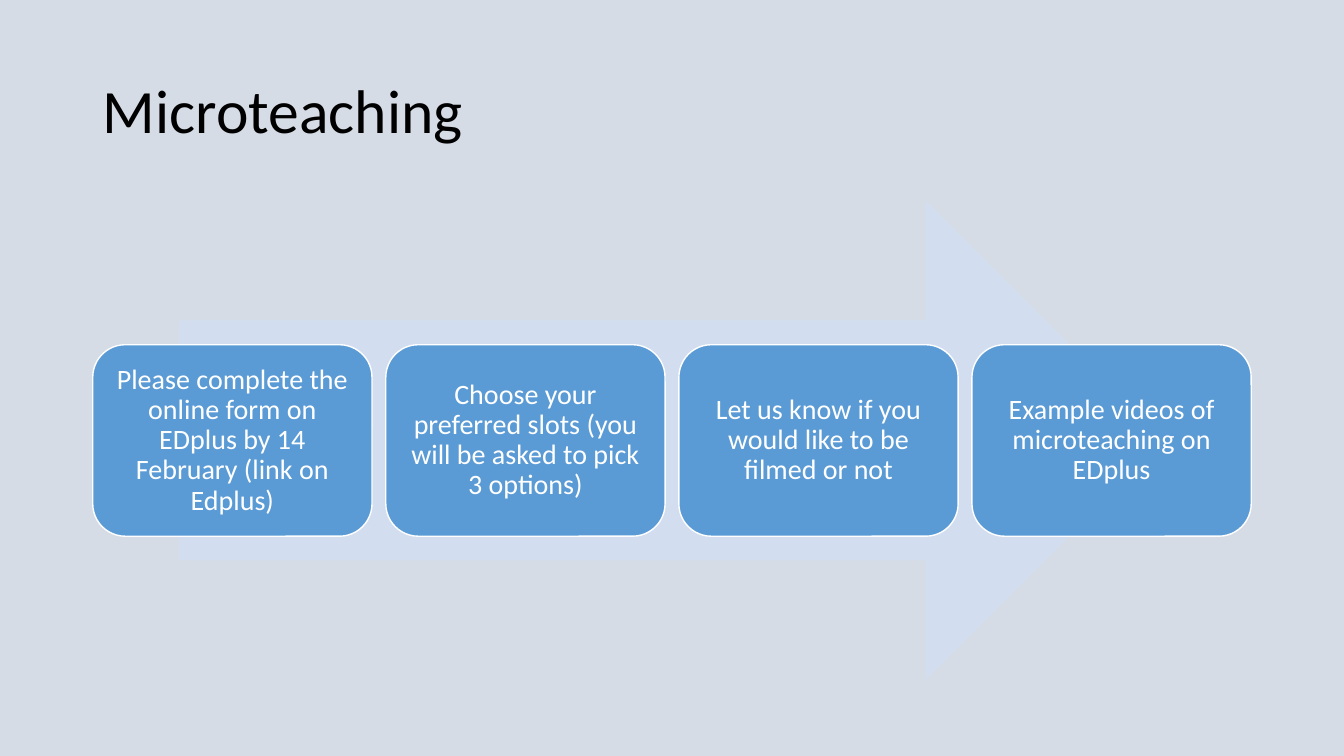
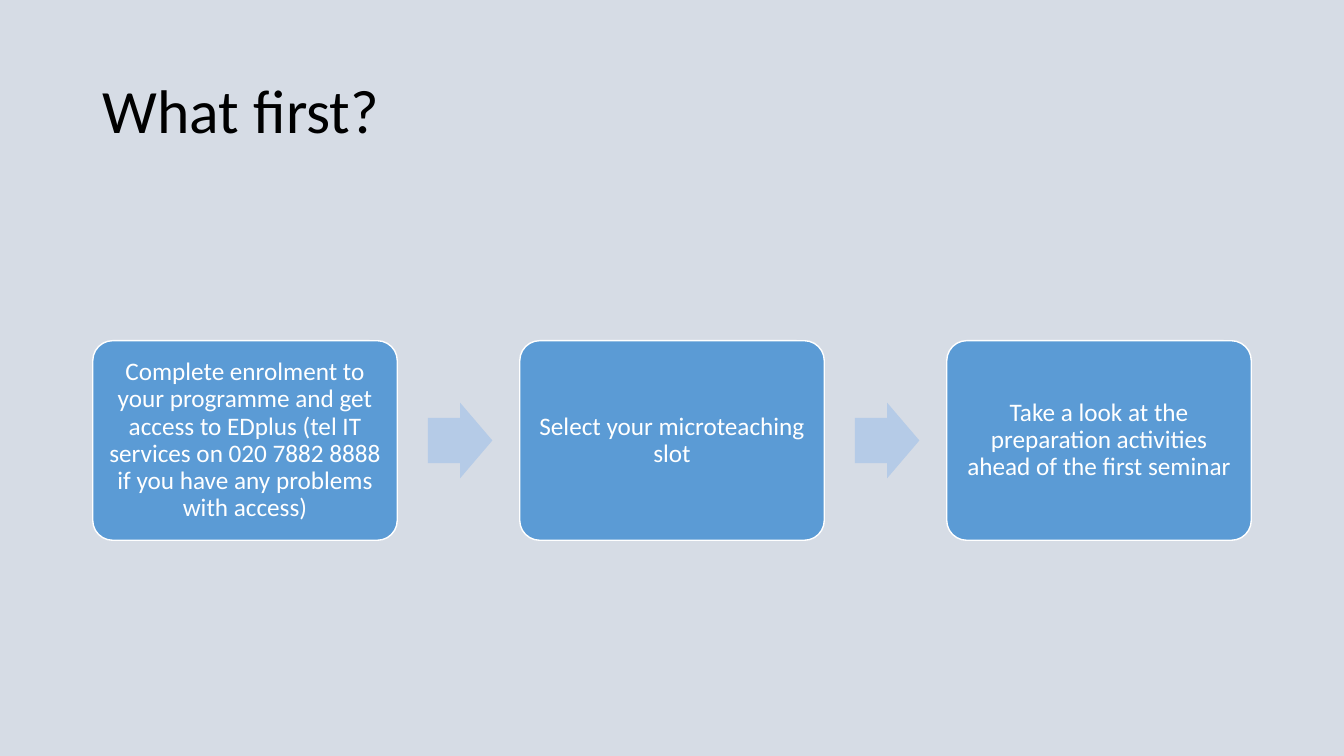
from pptx import Presentation
from pptx.dml.color import RGBColor
from pptx.enum.shapes import MSO_SHAPE
from pptx.enum.text import MSO_ANCHOR, MSO_AUTO_SIZE, PP_ALIGN
from pptx.util import Inches, Pt

ROUNDED = MSO_SHAPE.ROUNDED_RECTANGLE
RIGHT_ARROW = MSO_SHAPE.RIGHT_ARROW
MIDDLE = MSO_ANCHOR.MIDDLE
NO_AUTOFIT = MSO_AUTO_SIZE.NONE
LEFT, CENTER = PP_ALIGN.LEFT, PP_ALIGN.CENTER

FONT = "Calibri"
BACKGROUND = "D6DCE5"
BLACK = "000000"
WHITE = "FFFFFF"
BOX_BLUE = "5B9BD5"
PALE_ARROW = "D2DEEF"
STEP_ARROW = "B5CBE7"

ROW_LEFT, ROW_WIDTH = 0.92, 11.49
ROW_MIDDLE = 4.37


def color(hex_string):
    return RGBColor.from_string(hex_string)


class Deck:
    """Holds the shared style and the slide being built."""

    def __init__(self):
        self.presentation = Presentation()
        self.presentation.slide_width = Inches(13.33)
        self.presentation.slide_height = Inches(7.5)
        background = self.presentation.slide_master.background.fill
        background.solid()
        background.fore_color.rgb = color(BACKGROUND)
        self.slide = None

    def add_slide(self, title):
        layout = self.presentation.slide_layouts.get_by_name("Title Only")
        self.slide = self.presentation.slides.add_slide(layout)
        shape = self.slide.shapes.title
        shape.left, shape.top = Inches(0.92), Inches(0.4)
        shape.width, shape.height = Inches(11.5), Inches(1.45)
        self.set_text(shape, title, 44, BLACK, LEFT)

    def set_text(self, shape, text, size, text_color, alignment):
        frame = shape.text_frame
        frame.text = text
        frame.word_wrap = True
        frame.auto_size = NO_AUTOFIT
        frame.vertical_anchor = MIDDLE
        paragraph = frame.paragraphs[0]
        paragraph.alignment = alignment
        paragraph.line_spacing = 0.9
        font = paragraph.runs[0].font
        font.name = FONT
        font.size = Pt(size)
        font.color.rgb = color(text_color)

    def shape(self, kind, left, width, height, fill):
        """Add a plain shape centred vertically on the row."""
        shape = self.slide.shapes.add_shape(
            kind, Inches(left), Inches(ROW_MIDDLE - height / 2),
            Inches(width), Inches(height))
        shape.shadow.inherit = False
        shape.fill.solid()
        shape.fill.fore_color.rgb = color(fill)
        shape.line.fill.background()
        return shape

    def arrow(self, left, width, height, fill, shaft=0.5):
        arrow = self.shape(RIGHT_ARROW, left, width, height, fill)
        arrow.adjustments[0] = shaft

    def box(self, left, width, height, text, size, corner, inset):
        box = self.shape(ROUNDED, left, width, height, BOX_BLUE)
        box.adjustments[0] = corner
        box.line.color.rgb = color(WHITE)
        box.line.width = Pt(1)
        frame = box.text_frame
        frame.margin_left = frame.margin_right = Inches(inset)
        frame.margin_top = frame.margin_bottom = Inches(inset)
        self.set_text(box, text, size, WHITE, CENTER)

    def box_row(self, texts, width, height, size, corner, inset, arrows=False):
        """Spread boxes evenly over the row, with optional arrows in the gaps."""
        gap = (ROW_WIDTH - len(texts) * width) / (len(texts) - 1)
        for index, text in enumerate(texts):
            left = ROW_LEFT + index * (width + gap)
            if arrows and index:
                self.arrow(left - 0.75 * gap, 0.64, 0.75, STEP_ARROW, shaft=0.6)
            self.box(left, width, height, text, size, corner, inset)


def main():
    deck = Deck()

    deck.add_slide("Microteaching")
    deck.arrow(1.78, 9.78, 4.76, PALE_ARROW)
    deck.box_row([
        "Please complete the online form on EDplus by 14 February (link on Edplus)",
        "Choose your preferred slots (you will be asked to pick 3 options)",
        "Let us know if you would like to be filmed or not",
        "Example videos of microteaching on EDplus",
    ], width=2.77, height=1.9, size=20, corner=0.17, inset=0.08)

    deck.add_slide("What first?")
    deck.box_row([
        "Complete enrolment to your programme and get access to EDplus (tel IT "
        "services on 020 7882 8888 if you have any problems with access)",
        "Select your microteaching slot",
        "Take a look at the preparation activities ahead of the first seminar",
    ], width=3.02, height=1.98, size=18, corner=0.1, inset=0.07, arrows=True)

    deck.presentation.save("out.pptx")


if __name__ == "__main__":
    main()
